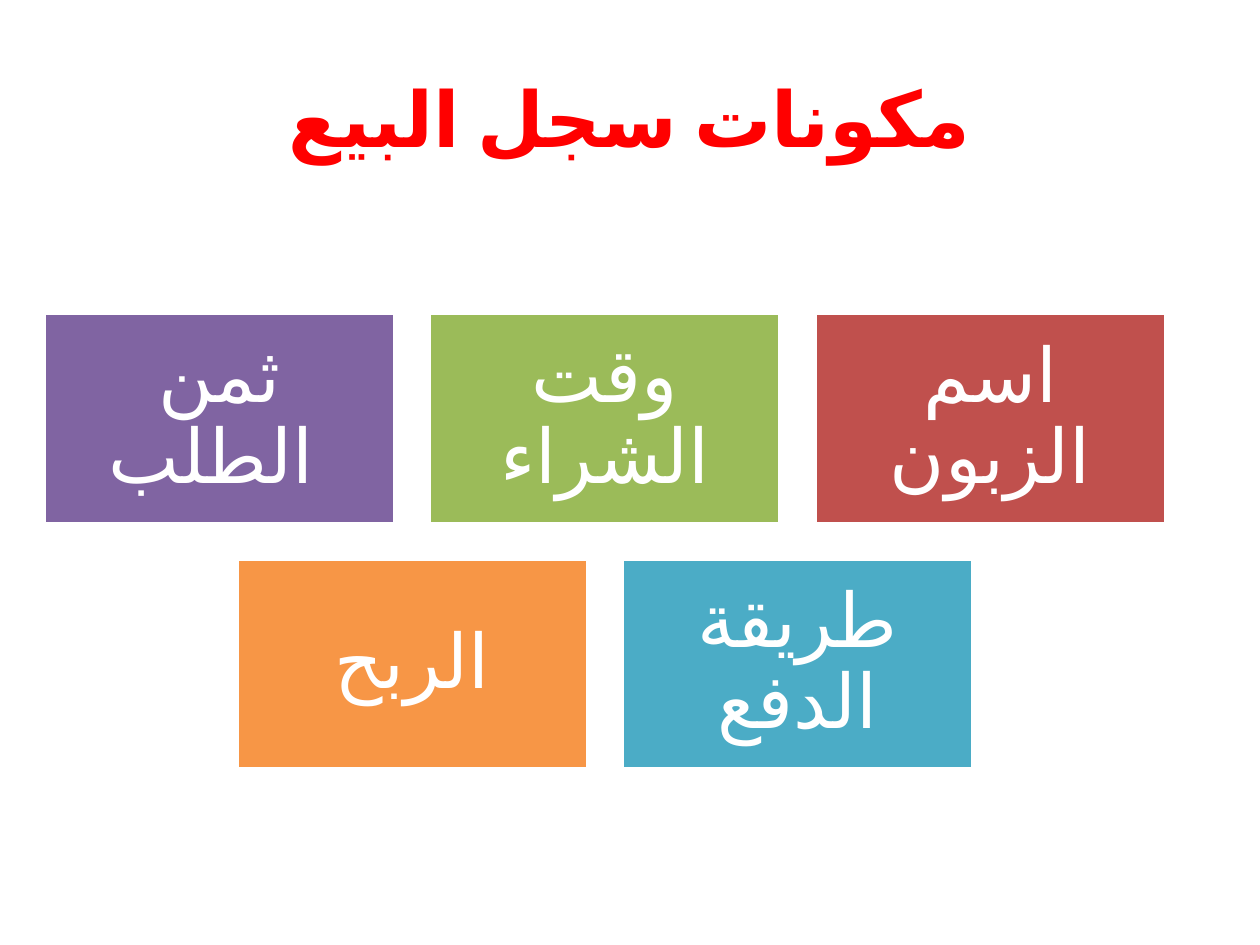
from dataclasses import dataclass

from lxml import etree
from pptx import Presentation
from pptx.dml.color import RGBColor
from pptx.enum.lang import MSO_LANGUAGE_ID
from pptx.enum.shapes import MSO_SHAPE
from pptx.enum.text import MSO_ANCHOR, PP_ALIGN
from pptx.oxml.ns import qn
from pptx.util import Pt

RECTANGLE = MSO_SHAPE.RECTANGLE
MIDDLE = MSO_ANCHOR.MIDDLE
CENTER = PP_ALIGN.CENTER
ARABIC = MSO_LANGUAGE_ID.ARABIC

FONT = "Calibri"
COLORS = {
    "title": "FF0000",
    "white": "FFFFFF",
    "red": "C0504D",
    "green": "9BBB59",
    "purple": "8064A2",
    "blue": "4BACC6",
    "orange": "F79646",
}

# Card grid, in points
CARD_WIDTH, CARD_HEIGHT, CARD_GAP = 200.2, 120.1, 20
GRID_CENTER, GRID_TOP = 345.6, 179.2


@dataclass
class Card:
    text: str
    color: str


# Each row reads from right to left
ROWS = [
    [Card("اسم الزبون", "red"), Card("وقت الشراء", "green"), Card("ثمن الطلب ", "purple")],
    [Card("طريقة الدفع", "blue"), Card("الربح", "orange")],
]


def color(name: str) -> RGBColor:
    return RGBColor.from_string(COLORS[name])


def write_text(box, text: str, *, size: float, ink: str, bold: bool = False,
               margin: float = 7.2, line_spacing: float = 1.0) -> None:
    frame = box.text_frame
    frame.word_wrap = True
    frame.vertical_anchor = MIDDLE
    frame.margin_left = frame.margin_right = Pt(margin)
    frame.margin_top = frame.margin_bottom = Pt(margin)
    para = frame.paragraphs[0]
    para.alignment = CENTER
    para.line_spacing = line_spacing
    span = para.add_run()
    span.text = text
    span.font.name = FONT
    span.font.size = Pt(size)
    span.font.bold = bold
    span.font.language_id = ARABIC
    span.font.color.rgb = color(ink)
    # Arabic letters take the complex-script font
    etree.SubElement(span.font._element, qn("a:cs"), typeface=FONT)


def draw_card(page, card: Card, left: float, top: float) -> None:
    box = page.shapes.add_shape(RECTANGLE, Pt(left), Pt(top), Pt(CARD_WIDTH), Pt(CARD_HEIGHT))
    box.shadow.inherit = False
    box.fill.solid()
    box.fill.fore_color.rgb = color(card.color)
    box.line.color.rgb = color("white")
    box.line.width = Pt(2)
    write_text(box, card.text, size=43, ink="white", margin=13, line_spacing=0.9)


def draw_row(page, cards: list[Card], top: float) -> None:
    """Centre a row of cards, placing the first one at the right."""
    step = CARD_WIDTH + CARD_GAP
    row_width = len(cards) * step - CARD_GAP
    first_left = GRID_CENTER + row_width / 2 - CARD_WIDTH
    for index, card in enumerate(cards):
        draw_card(page, card, first_left - index * step, top)


def main() -> None:
    deck = Presentation()
    deck.slide_width, deck.slide_height = Pt(720), Pt(540)
    page = deck.slides.add_slide(deck.slide_layouts[6])

    # Title
    title = page.shapes.add_textbox(Pt(36), Pt(21.6), Pt(648), Pt(90))
    write_text(title, "مكونات سجل البيع", size=44, ink="title", bold=True)

    # Parts of the sales record
    for index, cards in enumerate(ROWS):
        draw_row(page, cards, GRID_TOP + index * (CARD_HEIGHT + CARD_GAP))

    deck.save("out.pptx")


if __name__ == "__main__":
    main()
